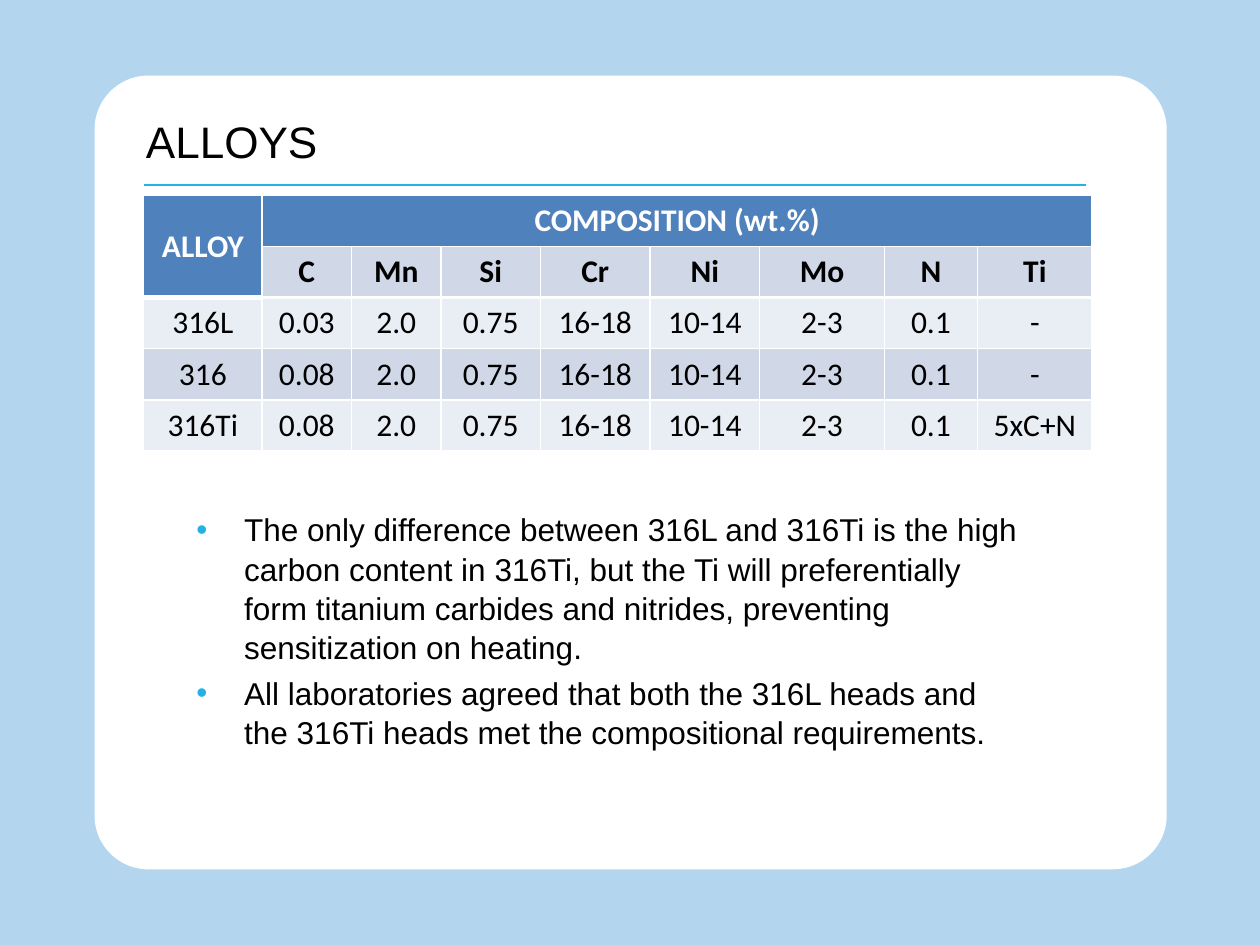
from pptx import Presentation
from pptx.dml.color import RGBColor
from pptx.enum.shapes import MSO_CONNECTOR, MSO_SHAPE
from pptx.enum.text import MSO_ANCHOR, PP_ALIGN
from pptx.oxml import parse_xml
from pptx.oxml.ns import nsdecls
from pptx.util import Inches, Pt

HUES = {
    "sky": "B3D6EE", "white": "FFFFFF", "black": "000000", "cyan": "23B2E3",
    "head": "4F81BD", "dark": "D0D8E8", "light": "E9EDF4",
}


def hue(name):
    return RGBColor.from_string(HUES[name])


def add_run(par, text, size, font, color, bold=False):
    run = par.add_run()
    run.text = text
    run.font.size = Pt(size)
    run.font.name = font
    run.font.bold = bold
    run.font.color.rgb = hue(color)


deck = Presentation()
deck.slide_width = Inches(10)
deck.slide_height = Inches(7.5)
slide = deck.slides.add_slide(deck.slide_layouts[6])
slide.background.fill.solid()
slide.background.fill.fore_color.rgb = hue("sky")

panel = slide.shapes.add_shape(
    MSO_SHAPE.ROUNDED_RECTANGLE, Inches(0.75), Inches(0.6), Inches(8.51), Inches(6.3))
panel.adjustments[0] = 0.068
panel.shadow.inherit = False
panel.fill.solid()
panel.fill.fore_color.rgb = hue("white")
panel.line.fill.background()

rule = slide.shapes.add_connector(
    MSO_CONNECTOR.STRAIGHT, Inches(1.14), Inches(1.47), Inches(8.62), Inches(1.47))
rule.line.color.rgb = hue("cyan")
rule.line.width = Pt(1.5)
rule._element.spPr.append(parse_xml(f"<a:effectLst {nsdecls('a')}/>"))

title = slide.shapes.add_textbox(
    Inches(1.06), Inches(0.85), Inches(7.26), Inches(0.54)).text_frame
title.word_wrap = True
title.vertical_anchor = MSO_ANCHOR.MIDDLE
add_run(title.paragraphs[0], "ALLOYS", 25.2, "Arial", "black")

notes = [
    "The only difference between 316L and 316Ti is the high carbon content in 316Ti, "
    "but the Ti will preferentially form titanium carbides and nitrides, "
    "preventing sensitization on heating.",
    "All laboratories agreed that both the 316L heads and the 316Ti heads "
    "met the compositional requirements.",
]
body = slide.shapes.add_textbox(
    Inches(1.46), Inches(3.99), Inches(6.78), Inches(2.44)).text_frame
body.word_wrap = True
for i, note in enumerate(notes):
    par = body.add_paragraph() if i else body.paragraphs[0]
    par.space_before = Pt(3.6)
    par.line_spacing = 1.04
    props = par._p.get_or_add_pPr()
    props.set("marL", str(Inches(0.38)))
    props.set("indent", str(-Inches(0.38)))
    props.append(parse_xml(
        f'<a:buClr {nsdecls("a")}><a:srgbClr val="{HUES["cyan"]}"/></a:buClr>'))
    props.append(parse_xml(f'<a:buFont {nsdecls("a")} typeface="Arial"/>'))
    props.append(parse_xml(f'<a:buChar {nsdecls("a")} char="•"/>'))
    add_run(par, note, 18, "Arial", "black")

rows = [
    ["ALLOY", "COMPOSITION (wt.%)", "", "", "", "", "", "", ""],
    ["", "C", "Mn", "Si", "Cr", "Ni", "Mo", "N", "Ti"],
    ["316L", "0.03", "2.0", "0.75", "16-18", "10-14", "2-3", "0.1", "-"],
    ["316", "0.08", "2.0", "0.75", "16-18", "10-14", "2-3", "0.1", "-"],
    ["316Ti", "0.08", "2.0", "0.75", "16-18", "10-14", "2-3", "0.1", "5xC+N"],
]
widths = [0.94, 0.71, 0.71, 0.79, 0.87, 0.87, 0.99, 0.74, 0.91]
fills = ["head", "dark", "light", "dark", "light"]
grid = slide.shapes.add_table(
    len(rows), len(widths), Inches(1.14), Inches(1.55), Inches(7.52), Inches(2.03)).table
for col, width in zip(grid.columns, widths):
    col.width = Inches(width)
grid.cell(0, 0).merge(grid.cell(1, 0))
grid.cell(0, 1).merge(grid.cell(0, 8))

for r, row in enumerate(rows):
    grid.rows[r].height = Inches(0.406)
    for c, text in enumerate(row):
        cell = grid.cell(r, c)
        top = r == 0 or (r == 1 and c == 0)
        edges = {"L": 1, "R": 1, "T": 2.25 if r == 2 else 1, "B": 2.25 if r == 1 else 1}
        if top and c == 0:
            edges["B"] = 3
        props = cell._tc.get_or_add_tcPr()
        for side, size in edges.items():
            props.append(parse_xml(
                f'<a:ln{side} {nsdecls("a")} w="{Pt(size)}"><a:solidFill>'
                f'<a:srgbClr val="{HUES["white"]}"/></a:solidFill></a:ln{side}>'))
        cell.fill.solid()
        cell.fill.fore_color.rgb = hue("head" if top else fills[r])
        if text:
            if top and c == 0:
                cell.vertical_anchor = MSO_ANCHOR.MIDDLE
            par = cell.text_frame.paragraphs[0]
            par.alignment = PP_ALIGN.CENTER
            add_run(par, text, 18, "Calibri", "white" if top else "black", r < 2)

deck.save("out.pptx")
